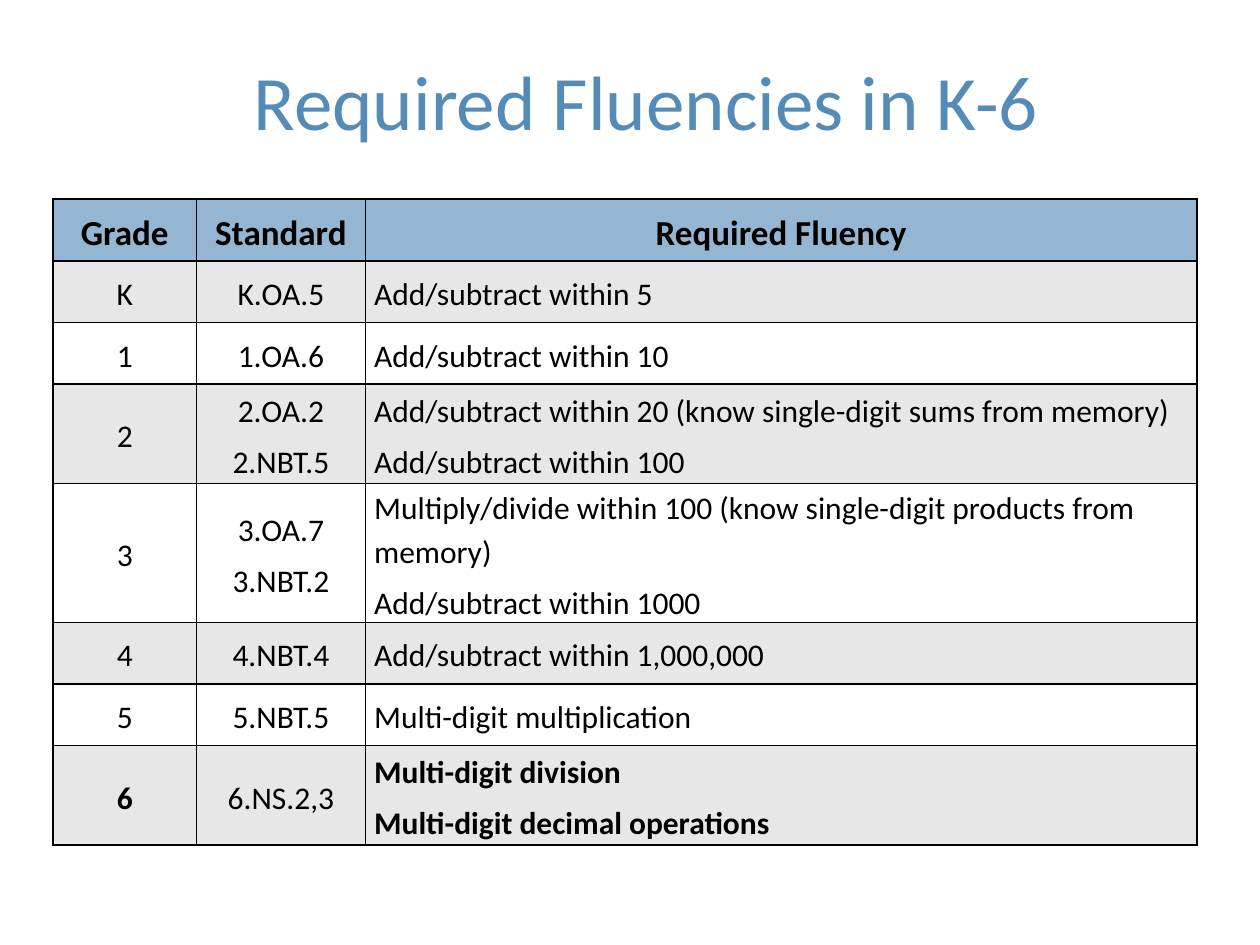
from lxml.etree import SubElement
from pptx import Presentation
from pptx.dml.color import RGBColor
from pptx.enum.text import MSO_ANCHOR as Anchor, PP_ALIGN as Align
from pptx.oxml.ns import qn
from pptx.util import Inches, Pt

COLUMN_WIDTHS = [1.14, 1.34, 6.6]
HEADERS = ["Grade", "Standard", "Required Fluency"]
# Grade, standards, fluencies, row height
FLUENCIES = [
    ("K", ["K.OA.5"], ["Add/subtract within 5"], 0.49),
    ("1", ["1.OA.6"], ["Add/subtract within 10"], 0.49),
    ("2", ["2.OA.2", "2.NBT.5"],
     ["Add/subtract within 20 (know single-digit sums from memory)",
      "Add/subtract within 100"], 0.79),
    ("3", ["3.OA.7", "3.NBT.2"],
     ["Multiply/divide within 100 (know single-digit products from memory)",
      "Add/subtract within 1000"], 1.1),
    ("4", ["4.NBT.4"], ["Add/subtract within 1,000,000"], 0.49),
    ("5", ["5.NBT.5"], ["Multi-digit multiplication"], 0.49),
    ("6", ["6.NS.2,3"],
     ["Multi-digit division", "Multi-digit decimal operations"], 0.79),
]


def color(value):
    return RGBColor.from_string(value)


class SlideBuilder:
    font = "Calibri"
    title_color = "548BB7"
    text_color = "000000"
    border_color = "000000"
    header_fill = "94B6D2"
    row_fills = ["E7E7E7", "FFFFFF"]

    def __init__(self, slide):
        self.slide = slide

    def style(self, paragraph, size, text_color, align, bold=False):
        paragraph.alignment = align
        paragraph.font.name = self.font
        paragraph.font.size = Pt(size)
        paragraph.font.bold = bold
        paragraph.font.color.rgb = color(text_color)

    def title(self, text, left, top, width, height):
        box = self.slide.shapes.add_textbox(
            Inches(left), Inches(top), Inches(width), Inches(height))
        frame = box.text_frame
        frame.word_wrap = True
        frame.vertical_anchor = Anchor.MIDDLE
        frame.text = text
        self.style(frame.paragraphs[0], 44, self.title_color, Align.CENTER)

    def table(self, left, top, widths, heights):
        frame = self.slide.shapes.add_table(
            len(heights), len(widths), Inches(left), Inches(top),
            Inches(sum(widths)), Inches(sum(heights)))
        table = frame.table
        for column, width in zip(table.columns, widths):
            column.width = Inches(width)
        for row, height in zip(table.rows, heights):
            row.height = Inches(height)
        return table

    def borders(self, cell):
        properties = cell._tc.get_or_add_tcPr()
        for side in ("a:lnL", "a:lnR", "a:lnT", "a:lnB"):
            line = SubElement(properties, qn(side), w=str(Pt(1)))
            fill = SubElement(line, qn("a:solidFill"))
            SubElement(fill, qn("a:srgbClr"), val=self.border_color)

    def cell(self, cell, lines, fill, align, size=18, bold=False, gap=2):
        self.borders(cell)
        cell.fill.solid()
        cell.fill.fore_color.rgb = color(fill)
        cell.vertical_anchor = Anchor.MIDDLE
        cell.margin_left = cell.margin_right = Inches(0.07)
        cell.margin_top = cell.margin_bottom = 0
        cell.text = "\n".join(lines)
        for paragraph in cell.text_frame.paragraphs:
            self.style(paragraph, size, self.text_color, align, bold)
            paragraph.line_spacing = 1.15
            paragraph.space_before = paragraph.space_after = Pt(gap)


def main():
    presentation = Presentation()
    presentation.slide_width = Inches(10)
    presentation.slide_height = Inches(7.5)
    slide = presentation.slides.add_slide(presentation.slide_layouts[6])
    builder = SlideBuilder(slide)

    # Title
    builder.title("Required Fluencies in K-6", 0.67, 0.25, 8.92, 1.08)

    # Table and header row
    heights = [0.49] + [height for *_, height in FLUENCIES]
    table = builder.table(0.42, 1.58, COLUMN_WIDTHS, heights)
    for column, header in enumerate(HEADERS):
        builder.cell(table.cell(0, column), [header], builder.header_fill,
                     Align.CENTER, size=20, bold=True, gap=0)

    # One row per grade, in alternating fills; grade 6 is emphasised
    for index, (grade, standards, fluencies, _) in enumerate(FLUENCIES):
        fill = builder.row_fills[index % 2]
        strong = grade == "6"
        row = index + 1
        builder.cell(table.cell(row, 0), [grade], fill, Align.CENTER, bold=strong)
        builder.cell(table.cell(row, 1), standards, fill, Align.CENTER)
        builder.cell(table.cell(row, 2), fluencies, fill, Align.LEFT, bold=strong)

    presentation.save("out.pptx")


if __name__ == "__main__":
    main()
